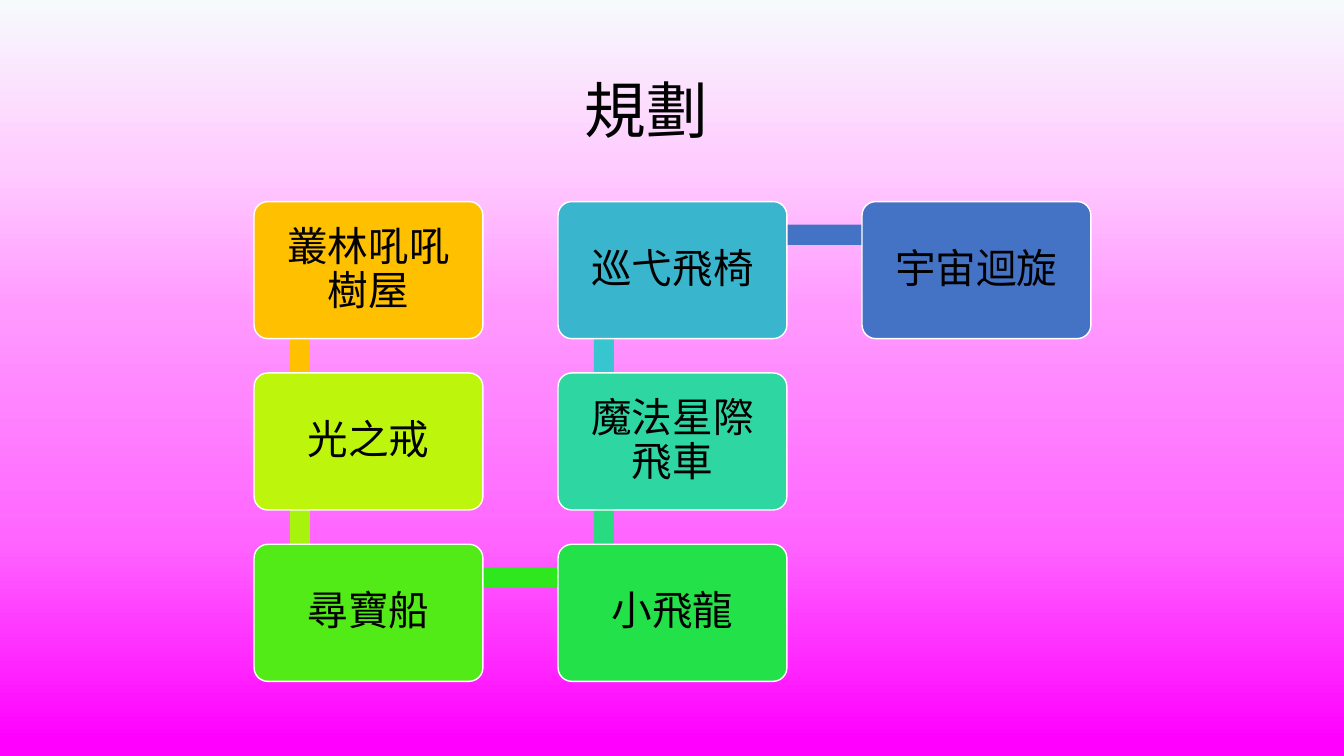
from lxml import etree
from pptx import Presentation
from pptx import util as u
from pptx.dml.color import RGBColor
from pptx.enum import shapes, text
from pptx.oxml.ns import qn

COLORS = {"black": "000000", "white": "FFFFFF"}
FONT = "Noto Sans CJK JP"
BACKGROUND = [(0, "F7FAFD"), (22, "FFCCFF"), (41, "FF99FF"), (71, "FF66FF"), (98, "FF00FF")]
STEPS = [
    ("叢林吼吼樹屋", "FFC000", "FFC000"),
    ("光之戒", "BEF50C", "A7F30E"),
    ("尋寶船", "53EB17", "2EE71C"),
    ("小飛龍", "23E148", "29DB80"),
    ("魔法星際飛車", "2ED7A1", "37C6CF"),
    ("巡弋飛椅", "39B6CE", "4472C4"),
    ("宇宙迴旋", "4472C4", None),
]
ROWS = 3
CARD_W, CARD_H = 2.27, 1.36
PITCH_X, PITCH_Y = 3.015, 1.7
ANCHOR_X, ANCHOR_Y = 0.455, 0.33
BAR = 0.2


def rgb(value):
    return RGBColor.from_string(value)


def set_attrs(obj, values):
    for name, value in values.items():
        setattr(obj, name, value)


def paint_background(s):
    fill = s.background.fill
    fill.gradient()
    fill.gradient_angle = 270
    stops = s.element.find(".//" + qn("a:gsLst"))
    for stop in list(stops):
        stops.remove(stop)
    for pos, color in BACKGROUND:
        stop = etree.SubElement(stops, qn("a:gs"), pos=str(pos * 1000))
        etree.SubElement(stop, qn("a:srgbClr"), val=color)


def write_text(tf, words, size, font, margins, align):
    set_attrs(tf, {"word_wrap": True, "vertical_anchor": text.MSO_ANCHOR.MIDDLE})
    set_attrs(tf, {"margin_" + side: u.Inches(m) for side, m in margins.items()})
    p = tf.paragraphs[0]
    set_attrs(p, {"alignment": align, "line_spacing": 0.9})
    r = p.add_run()
    r.text = words
    set_attrs(r.font, {"size": u.Pt(size), "name": font})
    r.font.color.rgb = rgb(COLORS["black"])
    etree.SubElement(r.font._element, qn("a:ea"), typeface=FONT)


def add_title(s, left, top, width, height):
    sp = s.shapes.add_textbox(*map(u.Inches, (left, top, width, height)))
    margins = {"left": 4.88, "right": 0.1, "top": 0.05, "bottom": 0.05}
    write_text(sp.text_frame, "規劃", 44, "Calibri", margins, text.PP_ALIGN.LEFT)


def add_block(s, kind, color, *box):
    sp = s.shapes.add_shape(kind, *map(u.Inches, box))
    sp.shadow.inherit = False
    sp.fill.solid()
    sp.fill.fore_color.rgb = rgb(color)
    sp.line.fill.background()
    return sp


def add_bar(s, color, start, end):
    (x1, y1), (x2, y2) = start, end
    left, top = min(x1, x2) + ANCHOR_X, min(y1, y2) + ANCHOR_Y
    if x1 == x2:
        box = left - BAR / 2, top, BAR, abs(y2 - y1)
    else:
        box = left, top - BAR / 2, abs(x2 - x1), BAR
    add_block(s, shapes.MSO_SHAPE.RECTANGLE, color, *box)


def add_card(s, words, color, left, top):
    sp = add_block(s, shapes.MSO_SHAPE.ROUNDED_RECTANGLE, color, left, top, CARD_W, CARD_H)
    sp.adjustments[0] = 0.1
    sp.line.color.rgb = rgb(COLORS["white"])
    sp.line.width = u.Pt(1)
    margins = dict.fromkeys(("left", "right", "top", "bottom"), 0.12)
    write_text(sp.text_frame, words, 29, FONT, margins, text.PP_ALIGN.CENTER)


def add_snake(s, left, top):
    spots = []
    for i in range(len(STEPS)):
        col, row = divmod(i, ROWS)
        if col % 2:
            row = ROWS - 1 - row
        spots.append((left + col * PITCH_X, top + row * PITCH_Y))
    for (_, _, color), start, end in zip(STEPS, spots, spots[1:]):
        add_bar(s, color, start, end)
    for (words, color, _), spot in zip(STEPS, spots):
        add_card(s, words, color, *spot)


def main():
    prs = Presentation()
    prs.slide_width, prs.slide_height = u.Inches(13.33), u.Inches(7.5)
    s = prs.slides.add_slide(prs.slide_layouts[6])
    paint_background(s)
    add_title(s, 0.92, 0.4, 11.5, 1.45)
    add_snake(s, 2.52, 2)
    prs.save("out.pptx")


if __name__ == "__main__":
    main()
